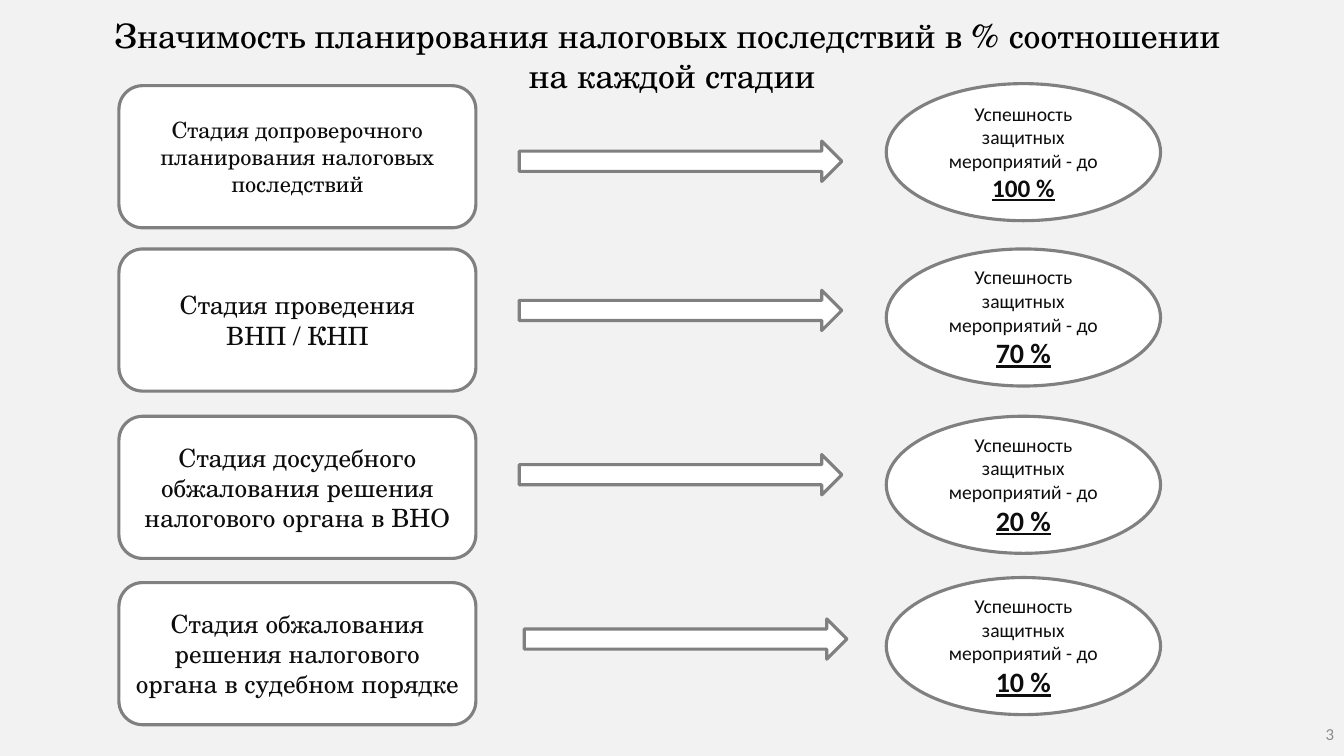
"""Build the slide on how much tax planning matters at each stage."""
from pptx import Presentation
from pptx.dml.color import RGBColor
from pptx.enum.shapes import MSO_SHAPE as Preset
from pptx.enum.text import MSO_ANCHOR as Anchor, PP_ALIGN as Align
from pptx.util import Inches, Pt

BACKGROUND = RGBColor(0xF2, 0xF2, 0xF2)
WHITE = RGBColor(0xFF, 0xFF, 0xFF)
OUTLINE = RGBColor(0x80, 0x80, 0x80)
BLACK = RGBColor(0, 0, 0)
TEXT = RGBColor(0x0D, 0x0D, 0x0D)
NUMBER = RGBColor(0x8C, 0x8C, 0x8C)
SERIF, SANS = "TeX Gyre Schola", "Calibri"

TITLE = "Значимость планирования налоговых последствий в % соотношении \nна каждой стадии"
SLIDE_NUMBER = "3"
SUCCESS = "Успешность защитных мероприятий - до "
STAGES = [
    {"stage": ["Стадия допроверочного планирования налоговых последствий"], "size": 16,
     "percent": "100 %", "percent_size": 18, "box": 0.85, "arrow": (5.15, 1.4), "oval": 0.83},
    {"stage": ["Стадия проведения", "ВНП / КНП"], "size": 18,
     "percent": "70 %", "percent_size": 20, "box": 2.47, "arrow": (5.15, 2.88), "oval": 2.47},
    {"stage": ["Стадия досудебного обжалования решения налогового органа в ВНО"], "size": 18,
     "percent": "20 %", "percent_size": 20, "box": 4.13, "arrow": (5.15, 4.51), "oval": 4.13},
    {"stage": ["Стадия обжалования решения налогового органа в судебном порядке"], "size": 18,
     "percent": "10 %", "percent_size": 20, "box": 5.78, "arrow": (5.2, 6.14), "oval": 5.73},
]
BOX_LEFT, BOX_SIZE = 1.18, (3.54, 1.41)
ARROW_SIZE = (3.2, 0.4)
OVAL_LEFT, OVAL_SIZE = 8.79, (2.72, 1.36)


def font_format(name, size, color, **extra):
    return {"name": name, "size": Pt(size), **extra}, color


def write(shape, paragraphs, align=Align.CENTER, anchor=Anchor.MIDDLE):
    frame = shape.text_frame
    frame.word_wrap = True
    frame.vertical_anchor = anchor
    for index, runs in enumerate(paragraphs):
        paragraph = frame.add_paragraph() if index else frame.paragraphs[0]
        paragraph.alignment = align
        for text, (values, color) in runs:
            for line_index, line in enumerate(text.split("\n")):
                if line_index:
                    paragraph.add_line_break()
                run = paragraph.add_run()
                run.text = line
                run.font.color.rgb = color
                for key, value in values.items():
                    setattr(run.font, key, value)


def add_outlined(slide, preset, left, top, size):
    shape = slide.shapes.add_shape(preset, *map(Inches, (left, top, *size)))
    shape.shadow.inherit = False
    shape.fill.solid()
    shape.fill.fore_color.rgb = WHITE
    shape.line.color.rgb = OUTLINE
    shape.line.width = Pt(2.25)
    return shape


def add_stage(slide, row):
    box = add_outlined(slide, Preset.ROUNDED_RECTANGLE, BOX_LEFT, row["box"], BOX_SIZE)
    stage_font = font_format(SERIF, row["size"], TEXT)
    write(box, [[(line, stage_font)] for line in row["stage"]])
    add_outlined(slide, Preset.RIGHT_ARROW, *row["arrow"], ARROW_SIZE)
    oval = add_outlined(slide, Preset.FLOWCHART_CONNECTOR, OVAL_LEFT, row["oval"], OVAL_SIZE)
    percent_font = font_format(SANS, row["percent_size"], TEXT, bold=True, underline=True)
    write(oval, [[(SUCCESS, font_format(SANS, 14, TEXT)), (row["percent"], percent_font)]])


def main():
    presentation = Presentation()
    presentation.slide_width, presentation.slide_height = Inches(13.33), Inches(7.5)
    slide = presentation.slides.add_slide(presentation.slide_layouts[6])
    slide.background.fill.solid()
    slide.background.fill.fore_color.rgb = BACKGROUND

    number = slide.shapes.add_textbox(*map(Inches, (10.33, 7.08, 3, 0.4)))
    write(number, [[(SLIDE_NUMBER, font_format(SANS, 12, NUMBER))]], Align.RIGHT)
    title = slide.shapes.add_textbox(*map(Inches, (0.84, 0.1, 11.65, 0.91)))
    write(title, [[(TITLE, font_format(SERIF, 24, BLACK))]], anchor=Anchor.TOP)
    for row in STAGES:
        add_stage(slide, row)
    presentation.save("out.pptx")


if __name__ == "__main__":
    main()
